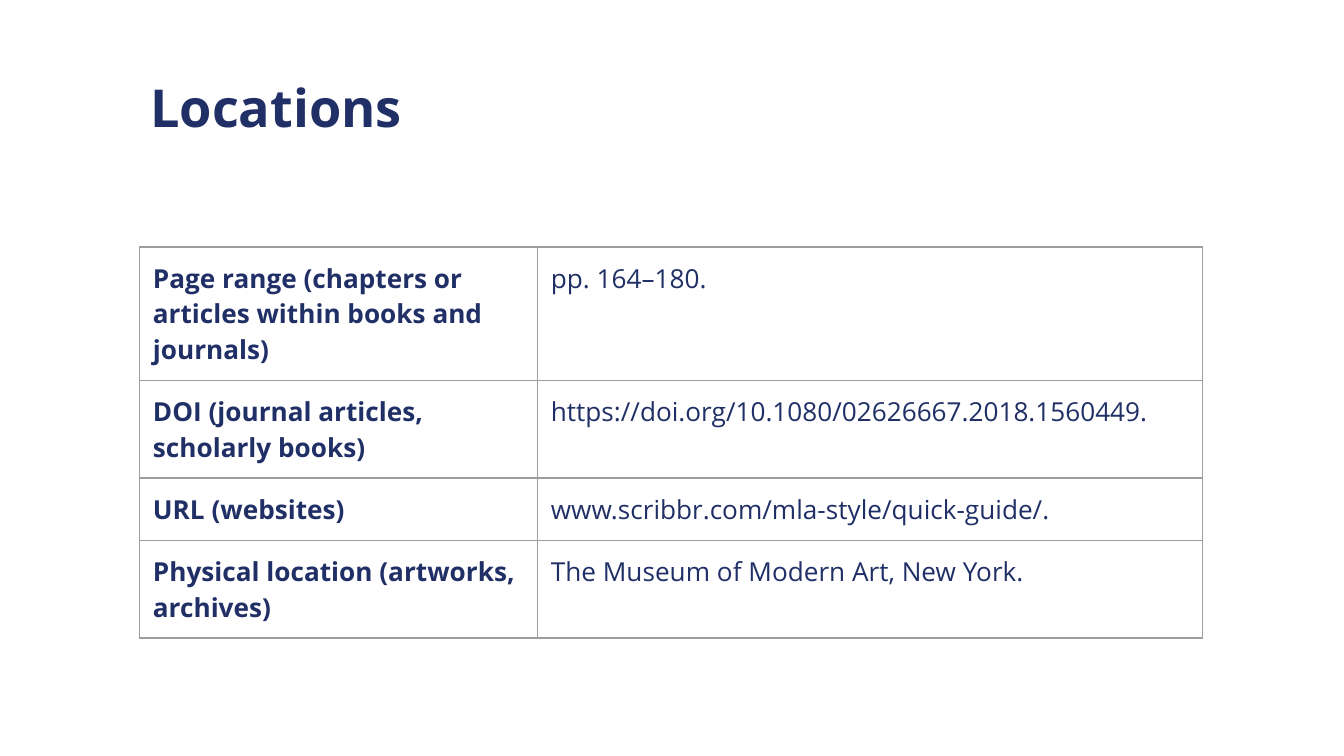
"""Builds a slide with a table of source locations for citations."""
from dataclasses import dataclass

from lxml import etree
from pptx import Presentation
from pptx.dml.color import RGBColor
from pptx.enum import text
from pptx.oxml import ns
from pptx.util import Cm, Pt


@dataclass(frozen=True)
class Theme:
    font: str = "Open Sans"
    ink: str = "202F66"
    border: str = "9E9E9E"
    border_width: float = 0.75
    title_size: int = 28
    body_size: int = 14
    inset: float = 0.25
    line_height: float = 0.67


THEME = Theme()
COLUMN_WIDTHS = (7.52, 12.57)
LOCATIONS = (
    ("Page range (chapters or articles within books and journals)", "pp. 164–180.", 3),
    ("DOI (journal articles, scholarly books)",
     "https://doi.org/10.1080/02626667.2018.1560449.", 2),
    ("URL (websites)", "www.scribbr.com/mla-style/quick-guide/.", 1),
    ("Physical location (artworks, archives)", "The Museum of Modern Art, New York.", 2),
)


def write_text(frame, content, size=THEME.body_size, bold=False):
    paragraph = frame.paragraphs[0]
    paragraph.alignment = text.PP_ALIGN.LEFT
    run = paragraph.add_run()
    run.text = content
    run.font.name = THEME.font
    run.font.size = Pt(size)
    run.font.bold = bold
    run.font.color.rgb = RGBColor.from_string(THEME.ink)


def add_title(slide, content):
    title = slide.shapes.title
    title.left, title.top, title.width, title.height = Cm(2.59), Cm(1.24), Cm(20), Cm(1.6)
    frame = title.text_frame
    frame.word_wrap = True
    frame.auto_size = text.MSO_AUTO_SIZE.NONE
    frame.vertical_anchor = text.MSO_ANCHOR.TOP
    frame.margin_left = frame.margin_right = Cm(THEME.inset)
    frame.margin_top, frame.margin_bottom = Cm(0.18), Cm(0)
    write_text(frame, content, size=THEME.title_size, bold=True)


def set_borders(cell):
    properties = cell._tc.get_or_add_tcPr()
    for position, side in enumerate(("a:lnL", "a:lnR", "a:lnT", "a:lnB")):
        line = etree.Element(ns.qn(side), w=str(Pt(THEME.border_width)))
        fill = etree.SubElement(line, ns.qn("a:solidFill"))
        etree.SubElement(fill, ns.qn("a:srgbClr"), val=THEME.border)
        properties.insert(position, line)


def fill_cell(cell, content, bold):
    cell.fill.background()
    cell.margin_left = cell.margin_right = Cm(THEME.inset)
    cell.margin_top = cell.margin_bottom = Cm(THEME.inset)
    cell.vertical_anchor = text.MSO_ANCHOR.TOP
    write_text(cell.text_frame, content, bold=bold)
    set_borders(cell)


def add_location_table(slide):
    heights = [Cm(2 * THEME.inset + lines * THEME.line_height) for *_, lines in LOCATIONS]
    frame = slide.shapes.add_table(len(LOCATIONS), len(COLUMN_WIDTHS), Cm(2.64), Cm(4.67),
                                   Cm(sum(COLUMN_WIDTHS)), sum(heights))
    table = frame.table
    table.first_row = table.horz_banding = False
    for column, width in zip(table.columns, COLUMN_WIDTHS):
        column.width = Cm(width)
    for row, height, (label, example, _) in zip(table.rows, heights, LOCATIONS):
        row.height = height
        fill_cell(row.cells[0], label, bold=True)
        fill_cell(row.cells[1], example, bold=False)


def main():
    presentation = Presentation()
    presentation.slide_width, presentation.slide_height = Cm(25.4), Cm(14.29)
    slide = presentation.slides.add_slide(presentation.slide_layouts[5])
    add_title(slide, "Locations")
    add_location_table(slide)
    presentation.save("out.pptx")


if __name__ == "__main__":
    main()
